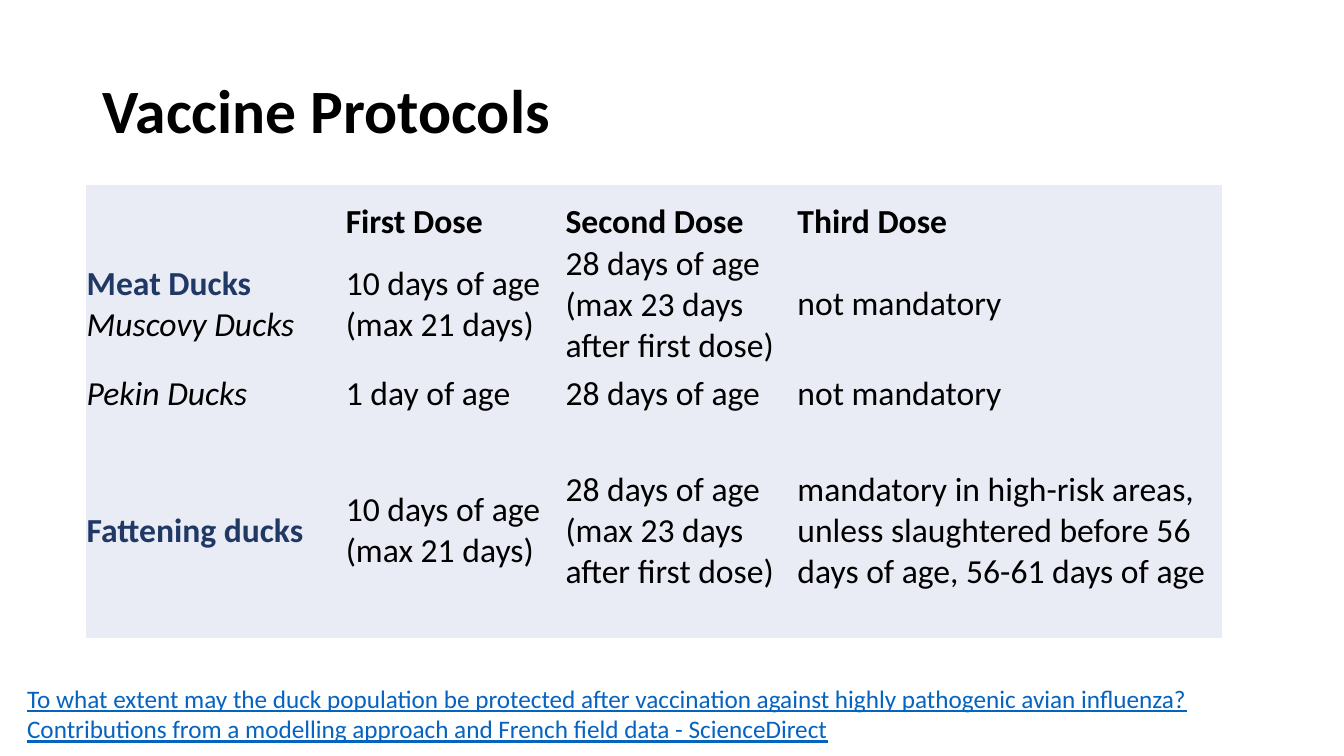
"""Builds the duck vaccine protocols slide."""
from pptx import Presentation
from pptx.dml.color import RGBColor
from pptx.enum.text import MSO_ANCHOR as Anchor, MSO_AUTO_SIZE as AutoSize
from pptx.oxml.ns import qn
from pptx.util import Inches, Pt

BLACK = RGBColor(0x00, 0x00, 0x00)
NAVY = RGBColor(0x20, 0x38, 0x64)
LINK_BLUE = RGBColor(0x05, 0x63, 0xC1)
PALE_BLUE = RGBColor(0xE9, 0xEB, 0xF5)
PLAIN_TABLE_STYLE = "{2D5ABB26-0587-4C30-8999-92F81FD0307C}"

PLAIN = {}
BOLD = {"bold": True}
GROUP = {"bold": True, "color": NAVY}
BREED = {"italic": True}

FIRST_DOSE = [[("10 days of age", PLAIN)], [("(max 21 days)", PLAIN)]]
SECOND_DOSE = [[("28 days of age", PLAIN)], [("(max 23 days after first dose)", PLAIN)]]
NOT_MANDATORY = [[("not mandatory", PLAIN)]]

PROTOCOLS = [
    [[], [[("First Dose", BOLD)]], [[("Second Dose", BOLD)]], [[("Third Dose", BOLD)]]],
    [[[("Meat Ducks ", GROUP), ("Muscovy Ducks", BREED)]],
     FIRST_DOSE, SECOND_DOSE, NOT_MANDATORY],
    [[[("Pekin Ducks", BREED)]], [[("1 day of age", PLAIN)]],
     [[("28 days of age", PLAIN)]], NOT_MANDATORY],
    [[[("Fattening ducks", GROUP)]], FIRST_DOSE, SECOND_DOSE,
     [[("mandatory in high-risk areas, unless slaughtered before 56 days of age, "
        "56-61 days of age", PLAIN)]]],
]
COLUMN_WIDTHS = [2.57, 2.18, 2.3, 4.22]
ROW_HEIGHTS = [0.57, 0.57, 0.57, 2.14]
SOURCE = ("To what extent may the duck population be protected after vaccination against "
          "highly pathogenic avian influenza? Contributions from a modelling approach and "
          "French field data - ScienceDirect")


class SlideBuilder:
    """Holds the font and the current slide."""

    def __init__(self, slide, font_name):
        self.slide = slide
        self.font_name = font_name

    def add_runs(self, frame, paragraphs, size):
        """Fill a text frame run by run."""
        for index, runs in enumerate(paragraphs):
            paragraph = frame.add_paragraph() if index else frame.paragraphs[0]
            for text, style in runs:
                run = paragraph.add_run()
                run.text = text
                font = run.font
                font.name = self.font_name
                font.size = Pt(size)
                font.bold = style.get("bold", False)
                font.italic = style.get("italic", False)
                font.underline = style.get("underline", False)
                font.color.rgb = style.get("color", BLACK)

    def text(self, left, top, width, height, paragraphs, size, anchor=Anchor.TOP):
        """Add a wrapping text box and return its frame."""
        box = self.slide.shapes.add_textbox(
            Inches(left), Inches(top), Inches(width), Inches(height))
        frame = box.text_frame
        frame.word_wrap = True
        frame.vertical_anchor = anchor
        self.add_runs(frame, paragraphs, size)
        return frame

    def table(self, left, top, widths, heights, rows, size):
        """Add a borderless filled table with a bottom-anchored header row."""
        frame = self.slide.shapes.add_table(
            len(heights), len(widths), Inches(left), Inches(top),
            Inches(sum(widths)), Inches(sum(heights)))
        table = frame.table
        table.first_row = False
        table.horz_banding = False
        frame._element.find(".//" + qn("a:tableStyleId")).text = PLAIN_TABLE_STYLE
        for column, width in zip(table.columns, widths):
            column.width = Inches(width)
        for row_index, (row, height) in enumerate(zip(table.rows, heights)):
            row.height = Inches(height)
            for cell, paragraphs in zip(row.cells, rows[row_index]):
                cell.fill.solid()
                cell.fill.fore_color.rgb = PALE_BLUE
                cell.margin_left = cell.margin_right = cell.margin_top = Inches(0.01)
                cell.margin_bottom = 0
                cell.vertical_anchor = Anchor.MIDDLE if row_index else Anchor.BOTTOM
                self.add_runs(cell.text_frame, paragraphs, size)


def main():
    """Create and save the presentation."""
    presentation = Presentation()
    presentation.slide_width = Inches(13.33)
    presentation.slide_height = Inches(7.5)
    slide = presentation.slides.add_slide(presentation.slide_layouts[6])
    builder = SlideBuilder(slide, "Calibri")

    title = builder.text(0.92, 0.4, 11.5, 1.45, [[("Vaccine Protocols", BOLD)]],
                         44, Anchor.MIDDLE)
    title.paragraphs[0].line_spacing = 0.9
    builder.table(0.85, 1.84, COLUMN_WIDTHS, ROW_HEIGHTS, PROTOCOLS, 24)
    source = builder.text(0.17, 6.73, 12.31, 0.71,
                          [[(SOURCE, {"underline": True, "color": LINK_BLUE})]], 18)
    source.auto_size = AutoSize.SHAPE_TO_FIT_TEXT

    presentation.save("out.pptx")


if __name__ == "__main__":
    main()
